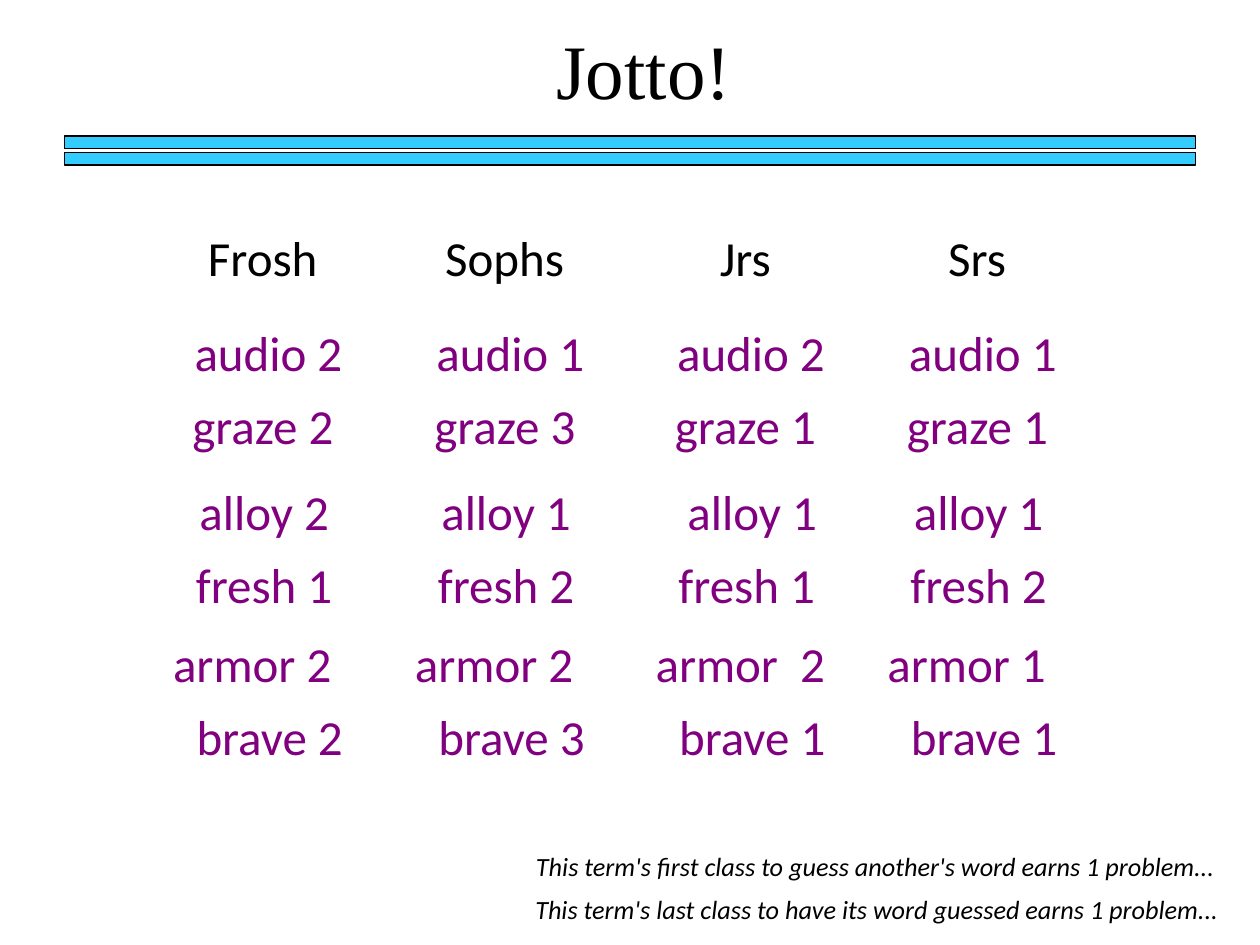
from dataclasses import dataclass

from pptx import Presentation
from pptx.dml.color import RGBColor
from pptx.enum.shapes import MSO_SHAPE
from pptx.enum.text import MSO_AUTO_SIZE, PP_ALIGN
from pptx.util import Inches, Pt

RECTANGLE = MSO_SHAPE.RECTANGLE
GROW = MSO_AUTO_SIZE.SHAPE_TO_FIT_TEXT
CENTER, RIGHT = PP_ALIGN.CENTER, PP_ALIGN.RIGHT

# Content
TITLE = "Jotto!"
CLASSES = ["Frosh", "Sophs", "Jrs", "Srs"]
GUESSES = [
    ["audio 2 ", "audio 1 ", "audio 2 ", "audio 1 "],
    ["graze 2 ", "graze 3 ", "graze 1 ", "graze 1 "],
    ["alloy 2 ", "alloy 1 ", "alloy 1", "alloy 1 "],
    ["fresh 1 ", "fresh 2 ", "fresh 1 ", "fresh 2 "],
    ["armor 2 ", "armor 2 ", "armor  2", "armor 1 "],
    ["brave 2 ", "brave 3 ", "brave 1 ", "brave 1 "],
]
NOTES = [
    "This term's first class to guess another's word earns 1 problem...",
    "This term's last class to have its word guessed earns 1 problem...",
]


@dataclass(frozen=True)
class Theme:
    ink: RGBColor = RGBColor(0, 0, 0)
    guess: RGBColor = RGBColor(0x80, 0, 0x80)
    bar: RGBColor = RGBColor(0x33, 0xCC, 0xFF)
    title_font: str = "Times New Roman"
    body_font: str = "Calibri"
    title_size: int = 44
    body_size: int = 28
    note_size: int = 15


THEME = Theme()

# Grid, in inches: column lefts, then (top, indent, width) of each row
COLUMNS = [1.25, 3.17, 5.08, 6.92]
CELL_HEIGHT = 0.57
HEADER_ROW = (1.76, 0, 1.67)
GUESS_ROWS = [
    (2.51, 0.17, 1.42),
    (3.09, 0.17, 1.42),
    (3.77, 0.18, 1.42),
    (4.35, 0.18, 1.42),
    (4.98, 0, 1.59),
    (5.56, 0.18, 1.42),
]


def add_bar(slide, top):
    bar = slide.shapes.add_shape(
        RECTANGLE, Inches(0.51), Inches(top), Inches(8.98), Inches(0.1))
    bar.shadow.inherit = False
    bar.fill.solid()
    bar.fill.fore_color.rgb = THEME.bar
    bar.line.color.rgb = THEME.ink
    bar.line.width = Pt(0.75)


def add_text(slide, text, box, size, color=THEME.ink, font=THEME.body_font,
             align=CENTER, italic=False):
    shape = slide.shapes.add_textbox(*map(Inches, box))
    frame = shape.text_frame
    frame.word_wrap = True
    frame.auto_size = GROW
    frame.text = text
    paragraph = frame.paragraphs[0]
    paragraph.alignment = align
    style = paragraph.runs[0].font
    style.name, style.size, style.italic = font, Pt(size), italic
    style.color.rgb = color


def add_row(slide, texts, row, color):
    top, indent, width = row
    for left, text in zip(COLUMNS, texts):
        add_text(slide, text, (left + indent, top, width, CELL_HEIGHT),
                 THEME.body_size, color)


def main():
    presentation = Presentation()
    presentation.slide_width, presentation.slide_height = Inches(10), Inches(7.5)
    slide = presentation.slides.add_slide(presentation.slide_layouts[6])

    # Title and double rule
    for top in (1.08, 1.21):
        add_bar(slide, top)
    add_text(slide, TITLE, (2.48, 0.13, 5.26, 0.83), THEME.title_size,
             font=THEME.title_font)

    # Score grid
    add_row(slide, CLASSES, HEADER_ROW, THEME.ink)
    for texts, row in zip(GUESSES, GUESS_ROWS):
        add_row(slide, texts, row, THEME.guess)

    # Closing notes
    for index, note in enumerate(NOTES):
        box = (1.41 + 0.03 * index, 6.7 + 0.34 * index, 8.33, 0.35)
        add_text(slide, note, box, THEME.note_size, align=RIGHT, italic=True)

    presentation.save("out.pptx")


if __name__ == "__main__":
    main()
